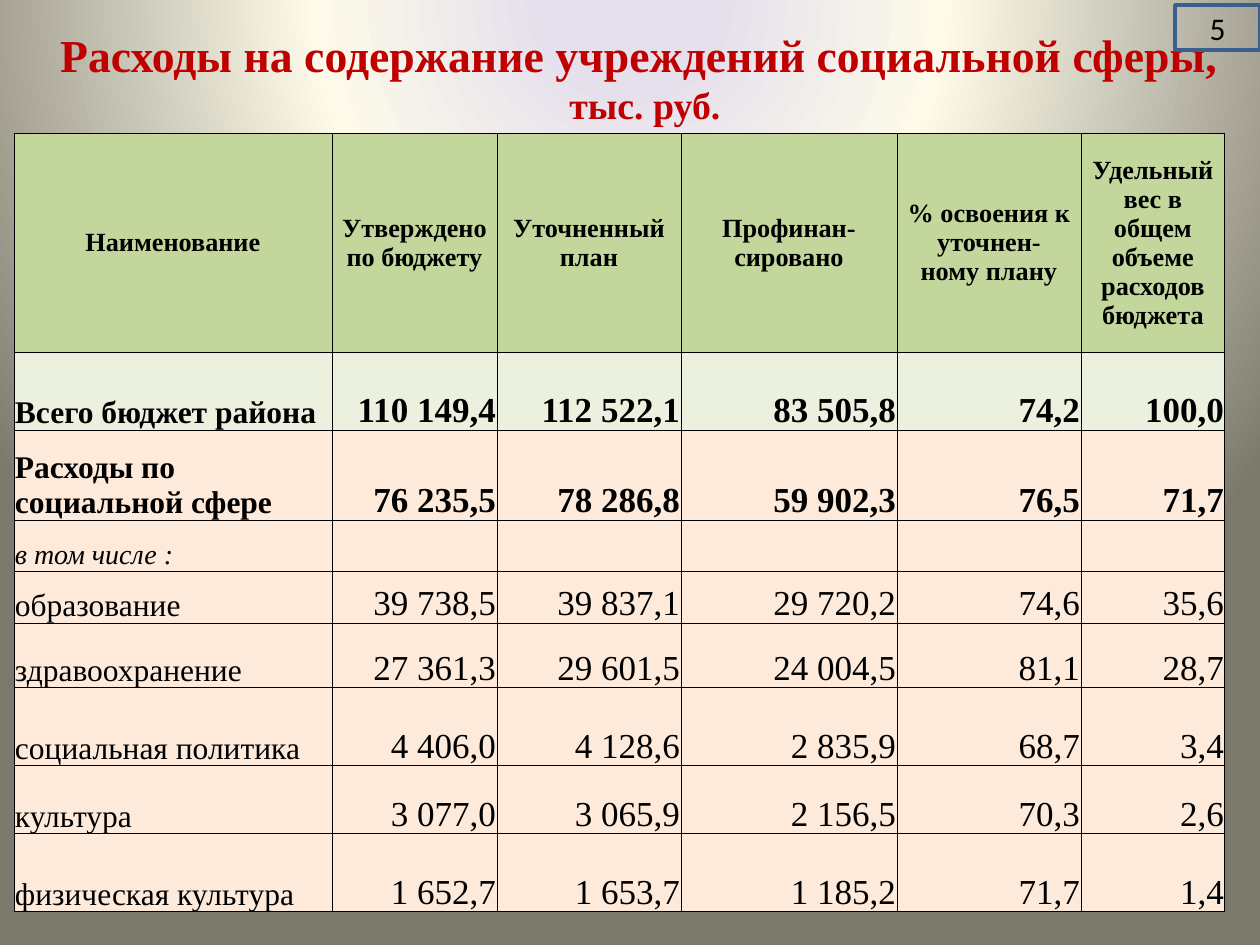
from lxml.etree import SubElement
from pptx import Presentation
from pptx.dml.color import RGBColor
from pptx.enum.shapes import MSO_SHAPE
from pptx.enum.text import MSO_ANCHOR, MSO_AUTO_SIZE, PP_ALIGN
from pptx.oxml import parse_xml
from pptx.oxml.ns import nsdecls, qn
from pptx.util import Emu, Pt

SERIF = "Times New Roman"
COLUMN_WIDTHS = [318, 165, 184, 216, 184, 144]
ROW_HEIGHTS = [219, 78, 90, 51, 52, 65, 78, 68, 78]
HEADINGS = [
    "Наименование",
    "Утверждено по бюджету",
    "Уточненный план",
    "Профинан-сировано",
    "% освоения к уточнен-\nному плану",
    "Удельный вес в общем объеме расходов бюджета",
]
EXPENSES = [
    ["Всего бюджет района", "110 149,4", "112 522,1", "83 505,8", "74,2", "100,0"],
    ["Расходы по социальной сфере", "76 235,5", "78 286,8", "59 902,3", "76,5", "71,7"],
    ["в том числе :", "", "", "", "", ""],
    ["образование", "39 738,5", "39 837,1", "29 720,2", "74,6", "35,6"],
    ["здравоохранение", "27 361,3", "29 601,5", "24 004,5", "81,1", "28,7"],
    ["социальная политика", "4 406,0", "4 128,6", "2 835,9", "68,7", "3,4"],
    ["культура", "3 077,0", "3 065,9", "2 156,5", "70,3", "2,6"],
    ["физическая культура", "1 652,7", "1 653,7", "1 185,2", "71,7", "1,4"],
]
HEADING_ROW, TOTAL_ROW, SOCIAL_ROW, INCLUDING_ROW = range(4)


def px(length):
    return Emu(round(length * 914400 / 126))


def color(value):
    return RGBColor.from_string(value)


def set_font(font, size, value, name=SERIF, bold=False, italic=False):
    font.size = Pt(size)
    font.name = name
    font.color.rgb = color(value)
    font.bold = bold
    font.italic = italic


def paint_background(slide):
    slide.background.fill.gradient()
    default = slide.element.find(".//" + qn("a:gradFill"))
    stops = "".join(
        f'<a:gs pos="{position * 1000}"><a:srgbClr val="{value}"/></a:gs>'
        for position, value in [(11, "E6E0EC"), (40, "FDFAEA"), (100, "7B796B")]
    )
    glow = parse_xml(
        f'<a:gradFill {nsdecls("a")} rotWithShape="1"><a:gsLst>{stops}</a:gsLst>'
        '<a:path path="circle"><a:fillToRect l="50000" t="-80000" r="50000" b="180000"/>'
        "</a:path></a:gradFill>"
    )
    default.getparent().replace(default, glow)


def place_title(slide, left, top, width, height):
    title = slide.shapes.title
    title.left, title.top, title.width, title.height = map(px, (left, top, width, height))
    frame = title.text_frame
    frame.word_wrap = True
    frame.auto_size = MSO_AUTO_SIZE.NONE
    frame.vertical_anchor = MSO_ANCHOR.BOTTOM
    heading = frame.paragraphs[0]
    heading.alignment = PP_ALIGN.CENTER
    subject = heading.add_run()
    subject.text = "Расходы на содержание учреждений социальной сферы, "
    heading.add_line_break()
    units = heading.add_run()
    units.text = "тыс. руб."
    set_font(heading.font, 26.1, "C00000", bold=True)
    set_font(subject.font, 26.1, "C00000", bold=True)
    set_font(units.font, 21.6, "C00000", bold=True)


def outline_cell(cell):
    properties = cell._tc.get_or_add_tcPr()
    for side in ("a:lnL", "a:lnR", "a:lnT", "a:lnB"):
        border = SubElement(properties, qn(side), w=str(Pt(0.5)))
        SubElement(SubElement(border, qn("a:solidFill")), qn("a:srgbClr"), val="000000")


def cell_format(row, column):
    if row == HEADING_ROW:
        return 15, PP_ALIGN.CENTER, "C3D69B"
    fill = "EBF1DE" if row == TOTAL_ROW else "FDEADA"
    if column:
        return 20, PP_ALIGN.RIGHT, fill
    if row == INCLUDING_ROW:
        return 16, PP_ALIGN.LEFT, fill
    return 18, PP_ALIGN.LEFT if row < INCLUDING_ROW else PP_ALIGN.JUSTIFY, fill


def fill_cell(cell, wording, row, column):
    size, alignment, fill = cell_format(row, column)
    outline_cell(cell)
    cell.fill.solid()
    cell.fill.fore_color.rgb = color(fill)
    cell.margin_left = cell.margin_right = cell.margin_top = px(1)
    cell.margin_bottom = 0
    cell.vertical_anchor = MSO_ANCHOR.MIDDLE if row == HEADING_ROW else MSO_ANCHOR.BOTTOM
    cell.text = wording
    for paragraph in cell.text_frame.paragraphs:
        paragraph.alignment = alignment
        set_font(paragraph.font, size, "000000",
                 bold=row <= SOCIAL_ROW, italic=row == INCLUDING_ROW)


def place_expenses(slide, left, top):
    table = slide.shapes.add_table(
        len(ROW_HEIGHTS), len(COLUMN_WIDTHS), px(left), px(top),
        px(sum(COLUMN_WIDTHS)), px(sum(ROW_HEIGHTS)),
    ).table
    table.first_row = table.horz_banding = False
    for column, width in zip(table.columns, COLUMN_WIDTHS):
        column.width = px(width)
    for row, height in zip(table.rows, ROW_HEIGHTS):
        row.height = px(height)
    for row, entries in enumerate([HEADINGS] + EXPENSES):
        for column, wording in enumerate(entries):
            fill_cell(table.cell(row, column), wording, row, column)


def place_page_number(slide, left, top, width, height):
    badge = slide.shapes.add_shape(MSO_SHAPE.RECTANGLE, *map(px, (left, top, width, height)))
    badge.shadow.inherit = False
    badge.fill.background()
    badge.line.color.rgb = color("3A5F8C")
    badge.line.width = Pt(2)
    frame = badge.text_frame
    frame.vertical_anchor = MSO_ANCHOR.MIDDLE
    number = frame.paragraphs[0]
    number.text = "5"
    number.alignment = PP_ALIGN.CENTER
    set_font(number.font, 18, "000000", name="Calibri")


def main():
    presentation = Presentation()
    presentation.slide_width, presentation.slide_height = px(1260), px(945)
    slide = presentation.slides.add_slide(presentation.slide_layouts[5])
    paint_background(slide)
    place_title(slide, 15, 15, 1260, 118)
    place_expenses(slide, 14, 133)
    place_page_number(slide, 1175, 5, 85, 45)
    presentation.save("out.pptx")


if __name__ == "__main__":
    main()
